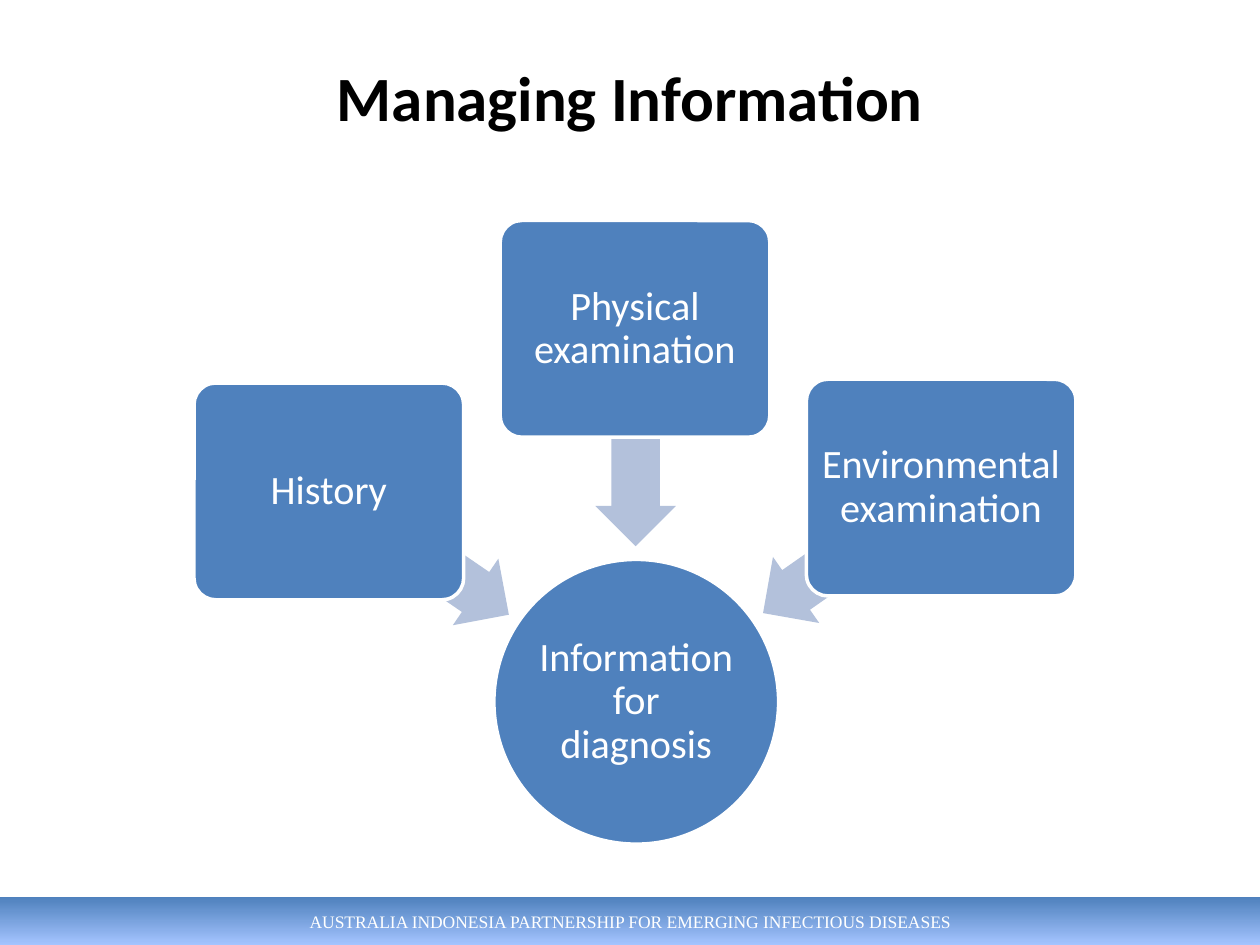
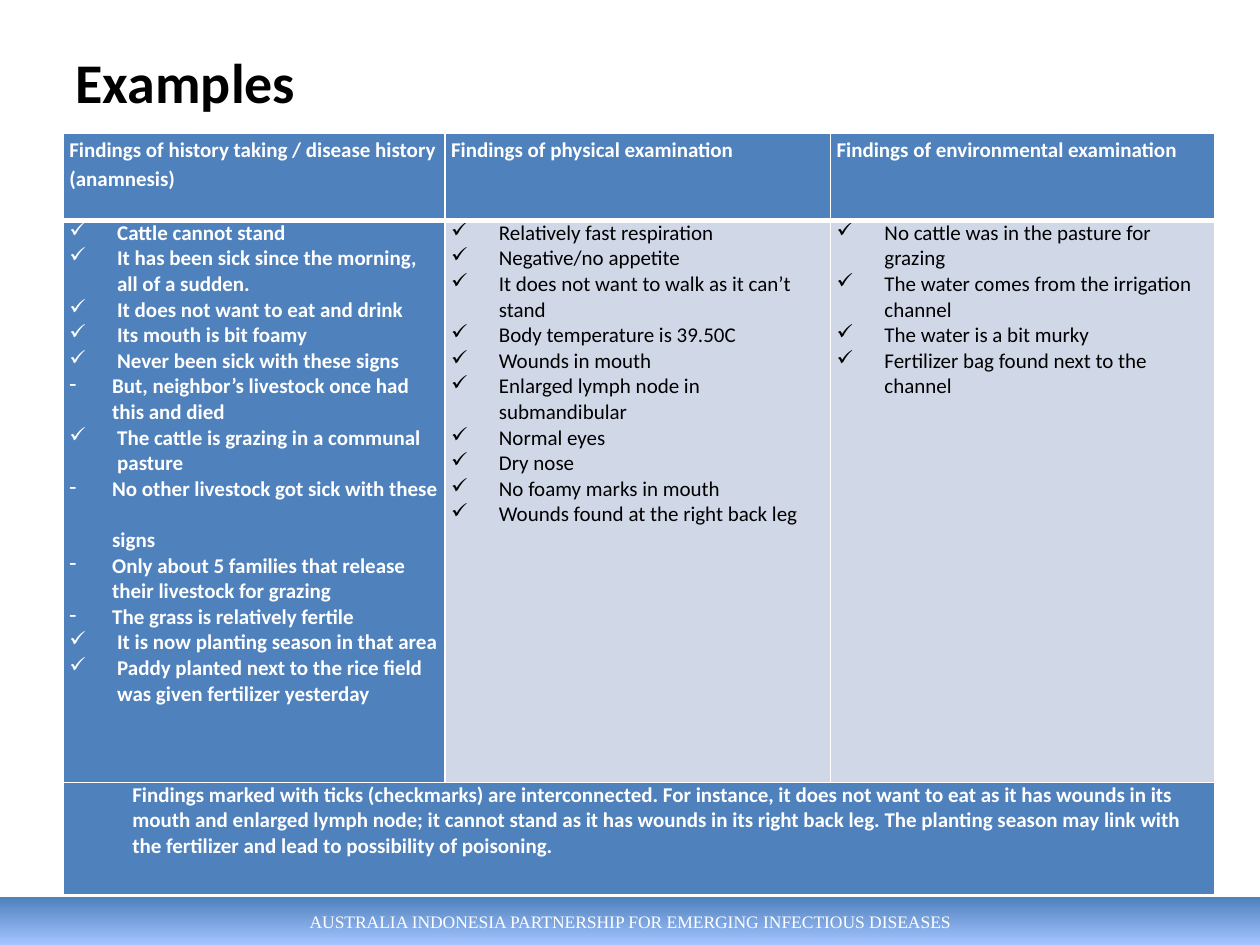
from lxml.etree import SubElement
from pptx import Presentation
from pptx.dml.color import RGBColor
from pptx.enum.shapes import MSO_SHAPE as Shape
from pptx.enum.text import MSO_ANCHOR as Anchor, PP_ALIGN as Align
from pptx.oxml.ns import qn
from pptx.util import Inches, Pt

COLORS = {"blue": "4F81BD", "glow": "A4C4FF", "arrow": "B3C1DB", "pale": "D0D8E8",
          "white": "FFFFFF", "black": "000000"}
FOOTER = "AUSTRALIA INDONESIA PARTNERSHIP FOR EMERGING INFECTIOUS DISEASES"

SOURCES = [
    ("History", (1.54, 3.04), (2.46, 4.07), 214.4),
    ("Physical examination", (3.97, 1.75), (4.18, 3.15), 270),
    ("Environmental examination", (6.4, 3.01), (5.9, 4.05), 325),
]
SOURCE_SIZE, ARROW_SIZE = (2.14, 1.72), (1.73, 0.64)
RESULT = ("Information for diagnosis", (3.92, 4.44, 2.26, 2.26))

TICK, DASH, PLAIN = "✓", "-", ""
HEADERS = ["Findings of history taking / disease history (anamnesis)",
           "Findings of physical examination",
           "Findings of environmental examination"]
HISTORY = [
    (TICK, "Cattle cannot stand"),
    (TICK, "It has been sick since the morning, all of a sudden."),
    (TICK, "It does not want to eat and drink"),
    (TICK, "Its mouth is bit foamy"),
    (TICK, "Never been sick with these signs"),
    (DASH, "But, neighbor’s livestock once had this and died"),
    (TICK, "The cattle is grazing in a communal pasture"),
    (DASH, "No other livestock got sick with these"),
    (PLAIN, "signs"),
    (DASH, "Only about 5 families that release their livestock for grazing"),
    (DASH, "The grass is relatively fertile"),
    (TICK, "It is now planting season in that area"),
    (TICK, "Paddy planted next to the rice field was given fertilizer yesterday"),
]
PHYSICAL = [(TICK, text) for text in (
    "Relatively fast respiration",
    "Negative/no appetite",
    "It does not want to walk as it can’t stand",
    "Body temperature is 39.50C",
    "Wounds in mouth",
    "Enlarged lymph node in submandibular",
    "Normal eyes",
    "Dry nose",
    "No foamy marks in mouth",
    "Wounds found at the right back leg",
)]
ENVIRONMENT = [(TICK, text) for text in (
    "No cattle was in the pasture for grazing",
    "The water comes from the irrigation channel",
    "The water is a bit murky",
    "Fertilizer bag found next to the channel",
)]
SUMMARY = ("Findings marked with ticks (checkmarks) are interconnected. For instance, it does not "
           "want to eat as it has wounds in its mouth and enlarged lymph node; it cannot stand as "
           "it has wounds in its right back leg. The planting season may link with the fertilizer "
           "and lead to possibility of poisoning.")
COLUMNS, ROWS = (3.03, 3.06, 3.05), (0.69, 4.46, 0.89)
INDENTS = {TICK: 0.38, DASH: 0.34, PLAIN: 0.34}


def color(name):
    return RGBColor.from_string(COLORS[name])


def set_values(target, values):
    for name, value in values.items():
        setattr(target, name, value)


def write(para, text, size, ink="white", bold=False, font="Calibri", **layout):
    set_values(para, layout)
    span = para.add_run()
    span.text = text
    set_values(span.font, {"name": font, "size": Pt(size), "bold": bold})
    span.font.color.rgb = color(ink)


def add_block(page, kind, place, fill, outline=False):
    box = page.shapes.add_shape(kind, *map(Inches, place))
    box.shadow.inherit = False
    box.fill.solid()
    box.fill.fore_color.rgb = color(fill)
    if outline:
        box.line.color.rgb = color("white")
        box.line.width = Pt(2)
    else:
        box.line.fill.background()
    return box


def label(box, text, inset):
    frame = box.text_frame
    set_values(frame, {"word_wrap": True, "vertical_anchor": Anchor.MIDDLE})
    set_values(frame, {f"margin_{side}": Inches(inset)
                       for side in ("left", "top", "right", "bottom")})
    write(frame.paragraphs[0], text, 23, alignment=Align.CENTER, line_spacing=0.9)


def add_page(deck, title, height, size, align):
    page = deck.slides.add_slide(deck.slide_layouts[5])
    band = add_block(page, Shape.RECTANGLE, (0, 7.12, 10, 0.38), "blue")
    band.fill.gradient()
    band.fill.gradient_angle = 270
    for stop, name in zip(band.fill.gradient_stops, ("blue", "glow")):
        stop.color.rgb = color(name)
    band.text_frame.vertical_anchor = Anchor.MIDDLE
    write(band.text_frame.paragraphs[0], FOOTER, 10, font="Times New Roman",
          alignment=Align.CENTER)
    heading = page.shapes.title
    set_values(heading, {"left": Inches(0.5), "top": Inches(0.3),
                         "width": Inches(9), "height": Inches(height)})
    heading.text_frame.vertical_anchor = Anchor.MIDDLE
    write(heading.text_frame.paragraphs[0], title, size, "black", True, alignment=align)
    return page


def indent(para, left, bullet=""):
    props = para._p.get_or_add_pPr()
    props.set("marL", str(Inches(left)))
    props.set("indent", str(-Inches(left) if bullet else 0))
    if bullet:
        SubElement(props, qn("a:buChar"), char=bullet)


def style_cell(cell, fill, bottom=1):
    set_values(cell, {"margin_left": Inches(0.05), "margin_right": Inches(0.05),
                      "margin_top": 0, "margin_bottom": 0})
    props = cell._tc.get_or_add_tcPr()
    for side, width in (("L", 1), ("R", 1), ("T", 1), ("B", bottom)):
        line = SubElement(props, qn(f"a:ln{side}"), w=str(Pt(width)))
        paint = SubElement(line, qn("a:solidFill"))
        SubElement(paint, qn("a:srgbClr"), val=COLORS["white"])
    cell.fill.solid()
    cell.fill.fore_color.rgb = color(fill)


def fill_findings(cell, findings, ink, bold):
    for number, (mark, text) in enumerate(findings):
        frame = cell.text_frame
        para = frame.add_paragraph() if number else frame.paragraphs[0]
        indent(para, INDENTS[mark], mark)
        gap = {"space_before": Pt(14.6)} if mark == PLAIN else {}
        write(para, text, 12, ink, bold, **gap)


def build_diagram(deck):
    page = add_page(deck, "Managing Information", 0.93, 36, Align.CENTER)
    text, place = RESULT
    label(add_block(page, Shape.OVAL, place, "blue", True), text, 0.02)
    for text, box_at, arrow_at, angle in SOURCES:
        arrow = add_block(page, Shape.LEFT_ARROW, arrow_at + ARROW_SIZE, "arrow")
        arrow.rotation = angle
        arrow.adjustments[0] = 0.6
        box = add_block(page, Shape.ROUNDED_RECTANGLE, box_at + SOURCE_SIZE, "blue", True)
        box.adjustments[0] = 0.1
        label(box, text, 0.05)


def build_examples(deck):
    page = add_page(deck, "Examples", 0.69, 32, Align.LEFT)
    place = (0.5, 1.06, sum(COLUMNS), sum(ROWS))
    table = page.shapes.add_table(len(ROWS), len(COLUMNS), *map(Inches, place)).table
    for column, width in zip(table.columns, COLUMNS):
        column.width = Inches(width)
    for row, height in zip(table.rows, ROWS):
        row.height = Inches(height)
    for index, (header, findings) in enumerate(zip(HEADERS, (HISTORY, PHYSICAL, ENVIRONMENT))):
        first = index == 0
        head, body, foot = (table.cell(row, index) for row in range(len(ROWS)))
        style_cell(head, "blue", 3)
        style_cell(body, "blue" if first else "pale")
        style_cell(foot, "blue")
        write(head.text_frame.paragraphs[0], header, 12, bold=True, line_spacing=1.15)
        fill_findings(body, findings, "white" if first else "black", first)
    summary = table.cell(2, 0)
    summary.merge(table.cell(2, 2))
    para = summary.text_frame.paragraphs[0]
    indent(para, 0.5)
    write(para, SUMMARY, 12, bold=True)


def main():
    deck = Presentation()
    set_values(deck, {"slide_width": Inches(10), "slide_height": Inches(7.5)})
    build_diagram(deck)
    build_examples(deck)
    deck.save("out.pptx")


if __name__ == "__main__":
    main()
